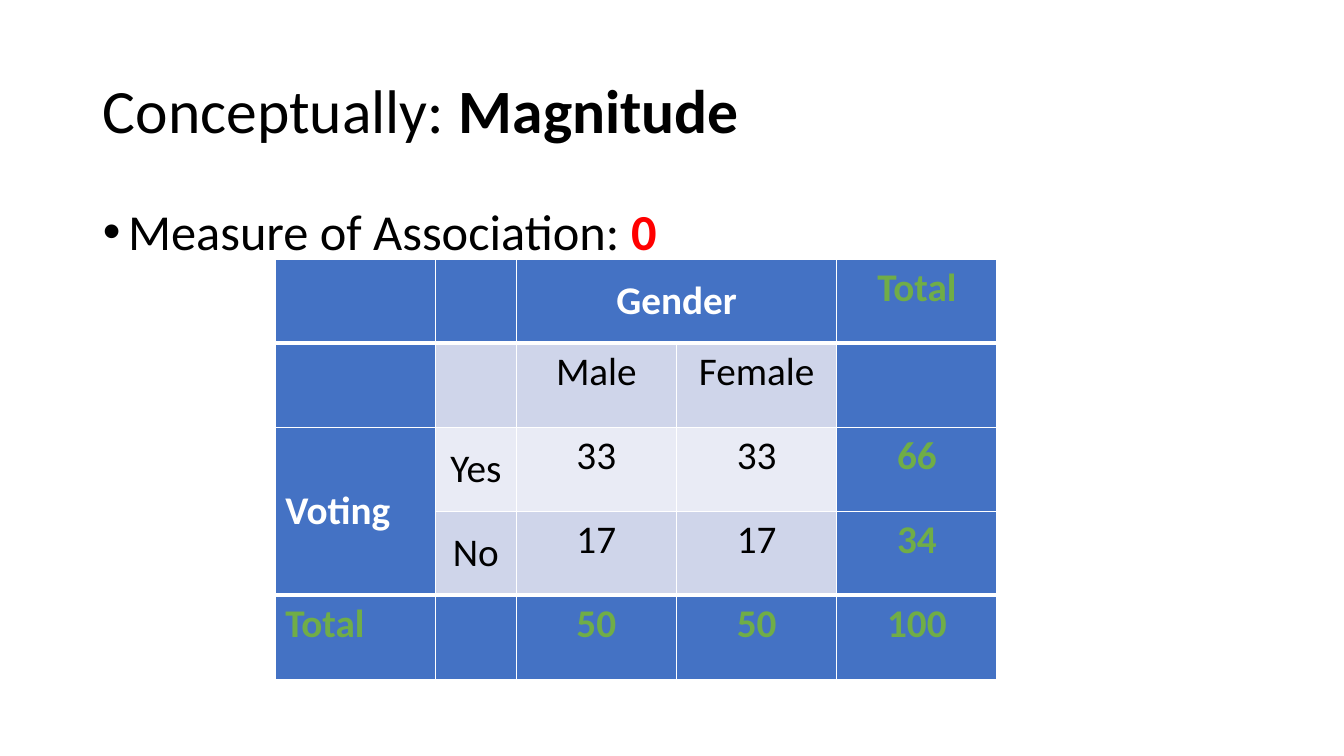
from lxml.etree import SubElement
from pptx import Presentation
from pptx.dml.color import RGBColor as Rgb
from pptx.enum.text import MSO_ANCHOR as Anchor, PP_ALIGN as Align
from pptx.oxml.ns import qn
from pptx.util import Pt

PX = 9144
FONT = "Calibri"
HUES = {
    "white": "FFFFFF",
    "black": "000000",
    "red": "FF0000",
    "blue": "4472C4",
    "green": "70AD47",
    "band": "CFD5EA",
    "pale": "E9EBF5",
}
ROWS = [
    ["", "", "Gender", "", "Total"],
    ["", "", "Male", "Female", ""],
    ["Voting", "Yes", "33", "33", "66"],
    ["", "No", "17", "17", "34"],
    ["Total", "", "50", "50", "100"],
]
COLS = [159, 80, 159, 159, 159]
LAST = 4
MIDDLE = {"Gender", "Voting", "Yes", "No"}


def hue(name):
    return Rgb.from_string(HUES[name])


def place(shape, box):
    shape.left, shape.top, shape.width, shape.height = [n * PX for n in box]


def style(para, size, color, bold=None):
    font = para.font
    font.name, font.size, font.bold = FONT, Pt(size), bold
    font.color.rgb = hue(color)


def add_head(slide, box):
    title = slide.shapes.title
    place(title, box)
    frame = title.text_frame
    frame.vertical_anchor = Anchor.MIDDLE
    para = frame.paragraphs[0]
    para.alignment, para.line_spacing = Align.LEFT, 0.9
    style(para, 44, "black")
    para.add_run().text = "Conceptually: "
    run = para.add_run()
    run.text, run.font.bold = "Magnitude", True


def add_list(slide, box):
    body = slide.placeholders[1]
    place(body, box)
    para = body.text_frame.paragraphs[0]
    para.line_spacing, para.space_before = 0.9, Pt(10)
    style(para, 36, "black")
    props = para._p.get_or_add_pPr()
    props.set("marL", str(25 * PX))
    props.set("indent", str(-25 * PX))
    para.add_run().text = "Measure of Association: "
    run = para.add_run()
    run.text, run.font.bold = "0", True
    run.font.color.rgb = hue("red")


def add_edges(cell, row):
    props = cell._tc.get_or_add_tcPr()
    wide = {"T": row in (1, LAST), "B": row in (0, LAST - 1)}
    for side in "LRTB":
        width = Pt(3 if wide.get(side) else 1)
        line = SubElement(props, qn(f"a:ln{side}"), w=str(width))
        fill = SubElement(line, qn("a:solidFill"))
        SubElement(fill, qn("a:srgbClr"), val=HUES["white"])


def fill_cell(cell, row, col, text):
    edge = row in (0, LAST) or col in (0, LAST)
    add_edges(cell, row)
    cell.fill.solid()
    cell.fill.fore_color.rgb = hue("blue" if edge else "pale" if row == 2 else "band")
    if not text:
        return
    cell.text = text
    if text in MIDDLE:
        cell.vertical_anchor = Anchor.MIDDLE
    para = cell.text_frame.paragraphs[0]
    para.alignment = Align.CENTER if col else Align.LEFT
    total = row == LAST or col == LAST
    style(para, 28, "green" if total else "white" if edge else "black", edge)


def add_grid(slide, box):
    frame = slide.shapes.add_table(len(ROWS), len(COLS), *[n * PX for n in box])
    table = frame.table
    for col, width in zip(table.columns, COLS):
        col.width = width * PX
    for row in table.rows:
        row.height = box[3] * PX // len(ROWS)
    for r, texts in enumerate(ROWS):
        for c, text in enumerate(texts):
            fill_cell(table.cell(r, c), r, c, text)
    table.cell(0, 2).merge(table.cell(0, 3))
    table.cell(2, 0).merge(table.cell(3, 0))


def main():
    deck = Presentation()
    deck.slide_width, deck.slide_height = 1333 * PX, 750 * PX
    slide = deck.slides.add_slide(deck.slide_layouts[1])
    add_list(slide, (92, 200, 1150, 476))
    add_head(slide, (92, 40, 1150, 145))
    add_grid(slide, (273, 257, sum(COLS), 417))
    deck.save("out.pptx")


if __name__ == "__main__":
    main()
